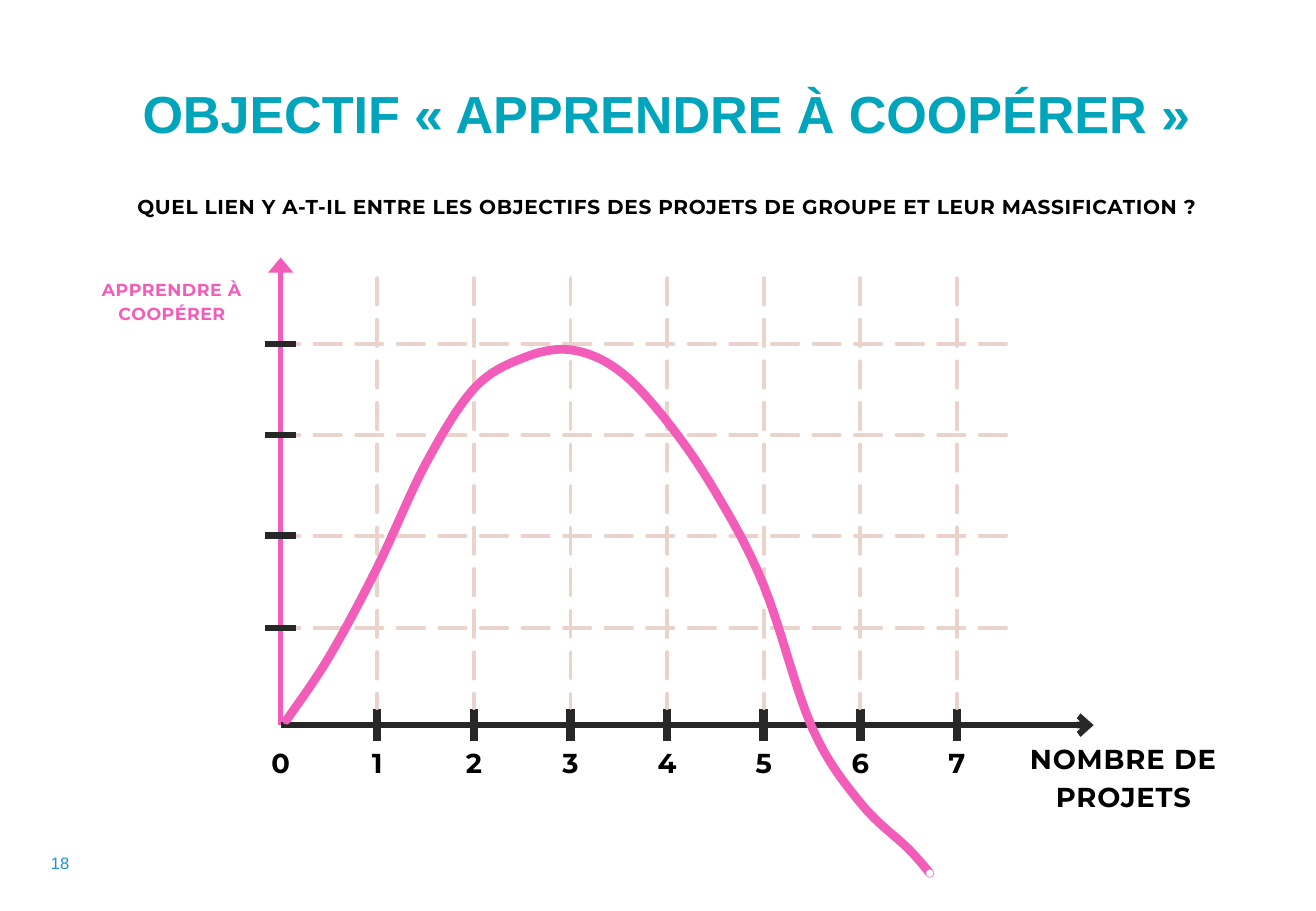
from dataclasses import dataclass

from lxml import etree
from pptx import Presentation
from pptx.dml.color import RGBColor
from pptx.enum import dml, shapes, text
from pptx.oxml import ns
from pptx.util import Inches, Pt


@dataclass(frozen=True)
class Theme:
    teal: str = "00A4BB"
    blue: str = "2392C9"
    pink: str = "F15DB8"
    sand: str = "EAD3CA"
    dark: str = "272727"
    black: str = "000000"
    white: str = "FFFFFF"
    display: str = "Arial"
    body: str = "Montserrat"
    title: float = 30.9
    axis: float = 16.2
    subtitle: float = 11.9
    label: float = 10.3
    number: float = 9.8
    curve_width: float = 5.2


T = Theme()
ORIGIN_X, ORIGIN_Y = 2.31, 5.97
PROJECT_WIDTH = 0.795
PROJECTS = range(8)
LEVELS_Y = [2.83, 3.58, 4.41, 5.17]
HALF_TICK = 0.13

# Height of the curve above the axis, in inches, at every half project
FIRST, LAST = (0.06, 0.04), (6.72, -1.22)
HEIGHTS = [0.56, 1.3, 2.15, 2.77, 3.02, 3.09, 2.92, 2.5, 1.92, 1.15,
           -0.02, -0.64, -1.02]


def project_x(projects):
    return ORIGIN_X + PROJECT_WIDTH * projects


def rgb(color):
    return RGBColor.from_string(color)


def add_text(s, box, content, size, color, font=T.body, bold=True, spacing=None,
             tracking=0, align=text.PP_ALIGN.CENTER, insets=(0, 0, 0, 0),
             anchor=text.MSO_ANCHOR.TOP):
    tf = s.shapes.add_textbox(*map(Inches, box)).text_frame
    tf.word_wrap = True
    tf.vertical_anchor = anchor
    (tf.margin_left, tf.margin_top,
     tf.margin_right, tf.margin_bottom) = map(Inches, insets)
    tf.text = content
    p = tf.paragraphs[0]
    p.alignment = align
    if spacing:
        p.line_spacing = Pt(spacing)
    r = p.runs[0]
    r.font.name, r.font.size, r.font.bold = font, Pt(size), bold
    r.font.color.rgb = rgb(color)
    if tracking:
        r.font._element.set("spc", str(round(tracking * 100)))


def add_line(s, start, end, color, width, dashed=False, head=None):
    """Draw a straight line; head is the (type, width, length) of its arrowhead."""
    line = s.shapes.add_connector(shapes.MSO_CONNECTOR.STRAIGHT,
                                  *map(Inches, (*start, *end)))
    line.line.color.rgb = rgb(color)
    line.line.width = Pt(width)
    sp_pr = line._element.spPr
    ln = sp_pr.find(ns.qn("a:ln"))
    if dashed:
        line.line.dash_style = dml.MSO_LINE.LONG_DASH
        ln.set("cap", "rnd")
    if head:
        kind, head_width, head_length = head
        etree.SubElement(ln, ns.qn("a:tailEnd"), type=kind, w=head_width, len=head_length)
    etree.SubElement(sp_pr, ns.qn("a:effectLst"))


def smooth(knots, steps=8):
    """Return points of a Catmull-Rom spline that passes through all knots."""
    padded = [knots[0], *knots, knots[-1]]
    points = [knots[0]]
    for quad in zip(padded, padded[1:], padded[2:], padded[3:]):
        for i in range(1, steps + 1):
            t = i / steps
            points.append(tuple(
                b + t / 2 * (c - a + t * (2 * a - 5 * b + 4 * c - d
                                          + t * (3 * b - a - 3 * c + d)))
                for a, b, c, d in zip(*quad)))
    return points


def add_axes(s):
    origin = (ORIGIN_X, ORIGIN_Y)
    add_line(s, origin, (ORIGIN_X, 2.12), T.pink, 3, head=("triangle", "lg", "med"))
    add_line(s, origin, (9, ORIGIN_Y), T.dark, 4, head=("arrow", "med", "sm"))
    for number in PROJECTS:
        x = project_x(number)
        if number:
            add_line(s, (x, ORIGIN_Y + HALF_TICK), (x, ORIGIN_Y - HALF_TICK), T.dark, 5)
        add_text(s, (x - 0.1, 6.18, 0.2, 0.24), str(number), T.axis, T.black,
                 spacing=16.7)


def add_grid(s):
    for number in PROJECTS[1:]:
        x = project_x(number)
        add_line(s, (x, 2.29), (x, 5.83), T.sand, 2.25, dashed=True)
    for y in LEVELS_Y:
        add_line(s, (8.28, y), (2.33, y), T.sand, 2.25, dashed=True)
        add_line(s, (ORIGIN_X - HALF_TICK, y), (ORIGIN_X + HALF_TICK, y), T.dark, 3.75)


def add_curve(s):
    half_projects = [(i / 2, height) for i, height in enumerate(HEIGHTS, start=1)]
    knots = [(project_x(projects), ORIGIN_Y - height)
             for projects, height in [FIRST, *half_projects, LAST]]
    start, *rest = [(Inches(x), Inches(y)) for x, y in smooth(knots)]
    builder = s.shapes.build_freeform(*start)
    builder.add_line_segments(rest, close=False)
    curve = builder.convert_to_shape()
    curve.shadow.inherit = False
    curve.fill.background()
    curve.line.color.rgb = rgb(T.pink)
    curve.line.width = Pt(T.curve_width)
    ln = curve._element.spPr.find(ns.qn("a:ln"))
    ln.set("cap", "rnd")
    etree.SubElement(ln, ns.qn("a:round"))
    add_end_dot(s, *knots[-1])


def add_end_dot(s, x, y, radius=0.03):
    dot = s.shapes.add_shape(shapes.MSO_SHAPE.OVAL, Inches(x - radius),
                             Inches(y - radius), Inches(2 * radius), Inches(2 * radius))
    dot.shadow.inherit = False
    dot.fill.solid()
    dot.fill.fore_color.rgb = rgb(T.white)
    dot.line.fill.background()


def main():
    prs = Presentation()
    prs.slide_width, prs.slide_height = Inches(10.83), Inches(7.5)
    s = prs.slides.add_slide(prs.slide_layouts[6])

    add_text(s, (1.1, 1.57, 8.78, 0.22),
             "QUEL LIEN Y A-T-IL ENTRE LES OBJECTIFS DES PROJETS DE GROUPE "
             "ET LEUR MASSIFICATION ?",
             T.subtitle, T.black, spacing=16.7, tracking=0.4)
    add_text(s, (0.82, 0.59, 9.33, 0.74), "OBJECTIF « APPRENDRE À COOPÉRER »",
             T.title, T.teal, font=T.display, spacing=39.6,
             insets=(0.1, 0.05, 0.1, 0.05))
    add_axes(s)
    add_text(s, (8.31, 6.06, 1.87, 0.62), "NOMBRE DE PROJETS", T.axis, T.black,
             spacing=22.8, tracking=0.5)
    add_text(s, (0.71, 2.27, 1.41, 0.38), "APPRENDRE À COOPÉRER", T.label, T.pink,
             spacing=14.4, tracking=0.3)
    add_grid(s)
    add_curve(s)
    add_text(s, (0.14, 6.97, 0.43, 0.27), "18", T.number, T.blue, font=T.display,
             bold=False, align=text.PP_ALIGN.RIGHT, insets=(0.1, 0.05, 0, 0.05),
             anchor=text.MSO_ANCHOR.MIDDLE)
    prs.save("out.pptx")


if __name__ == "__main__":
    main()
